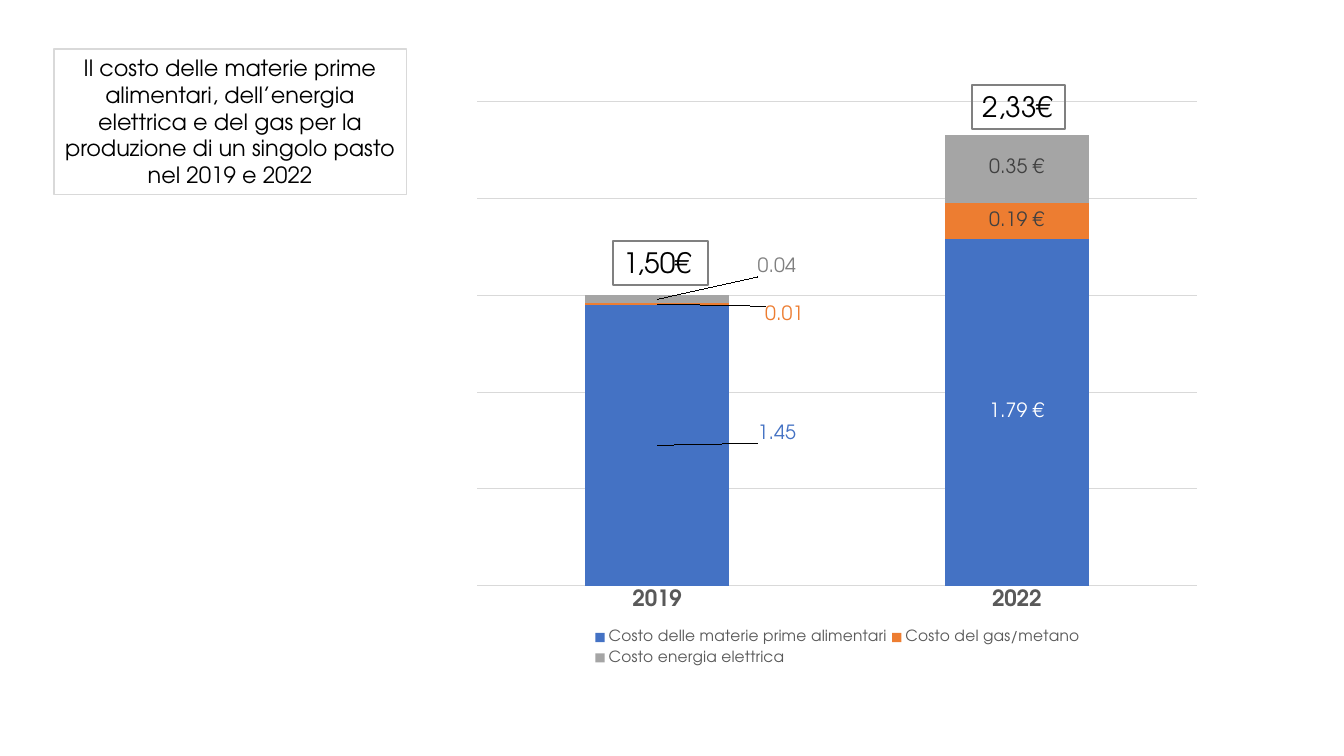
import lxml.etree
import pptx
import pptx.chart.data
import pptx.dml.color
import pptx.enum.chart
import pptx.enum.shapes
import pptx.enum.text
import pptx.oxml.ns
import pptx.util

EMU_PER_PX = 914400 / 100.8
FONT = "TeX Gyre Adventor"
COLORS = {
    "text": "000000",
    "axis": "595959",
    "grid": "D9D9D9",
    "frame": "808080",
    "dark": "404040",
    "white": "FFFFFF",
    "food": "4472C4",
    "gas": "ED7D31",
    "power": "A5A5A5",
}
YEARS = ["2019", "2022"]
# name, values, fill, label colour, 2019 label colour, 2019 label shift
COSTS = [
    ("Costo delle materie prime alimentari", (1.45, 1.79), "food", "white", "food", (0.16, -0.02)),
    ("Costo del gas/metano", (0.01, 0.19), "gas", "dark", "gas", (0.17, 0.02)),
    ("Costo energia elettrica", (0.04, 0.35), "power", "dark", "frame", (0.16, -0.055)),
]


def px(length):
    return pptx.util.Emu(round(length * EMU_PER_PX))


def color(name):
    return pptx.dml.color.RGBColor.from_string(COLORS[name])


def place(parent, index, **values):
    """Give a chart part a manual layout, as child number index."""
    tag = pptx.oxml.ns.qn
    for old in parent.findall(tag("c:layout")):
        parent.remove(old)
    layout = lxml.etree.Element(tag("c:layout"))
    manual = lxml.etree.SubElement(layout, tag("c:manualLayout"))
    for key, value in values.items():
        lxml.etree.SubElement(manual, tag("c:" + key)).set("val", str(value))
    parent.insert(index, layout)


class CostPage:
    def __init__(self, deck):
        self.page = deck.slides.add_slide(deck.slide_layouts[6])

    def style(self, font, size, name, bold=False):
        font.name = FONT
        font.size = pptx.util.Pt(size)
        font.bold = bold
        font.color.rgb = color(name)

    def line(self, line, name, width):
        line.color.rgb = color(name)
        line.width = pptx.util.Pt(width)

    def frame(self, bounds, text, size, border, width, align):
        box = self.page.shapes.add_shape(
            pptx.enum.shapes.MSO_SHAPE.RECTANGLE, *map(px, bounds))
        box.shadow.inherit = False
        box.fill.background()
        self.line(box.line, border, width)
        box.text_frame.word_wrap = True
        box.text_frame.vertical_anchor = pptx.enum.text.MSO_ANCHOR.TOP
        para = box.text_frame.paragraphs[0]
        para.text = text
        para.alignment = align
        self.style(para.font, size, "text")

    def cost_chart(self, bounds):
        data = pptx.chart.data.CategoryChartData(number_format='#,##0.00\\ "€"')
        data.categories = YEARS
        for name, values, *_ in COSTS:
            data.add_series(name, values)
        chart = self.page.shapes.add_chart(
            pptx.enum.chart.XL_CHART_TYPE.COLUMN_STACKED, *map(px, bounds), data).chart
        self.style(chart.font, 10, "text")
        chart.has_title = False

        plot = chart.plots[0]
        plot.gap_width, plot.overlap = 150, 100
        plot.vary_by_categories = False
        for series, cost in zip(plot.series, COSTS):
            self.series(series, *cost[1:])
        self.axes(chart)

        chart.has_legend = True
        chart.legend.position = pptx.enum.chart.XL_LEGEND_POSITION.BOTTOM
        chart.legend.include_in_layout = False
        self.style(chart.legend.font, 11, "axis")
        place(chart.legend._element, 1, xMode="edge", yMode="edge",
              x=0.17, y=0.92, w=0.66, h=0.08)
        area = chart._chartSpace.xpath(".//c:plotArea")[0]
        place(area, 0, layoutTarget="inner", xMode="edge", yMode="edge",
              x=0.019, y=0.019, w=0.96, h=0.834)

    def series(self, series, values, fill, label_color, first_color, shift):
        series.format.fill.solid()
        series.format.fill.fore_color.rgb = color(fill)
        labels = series.data_labels
        labels.show_value = True
        self.style(labels.font, 14, label_color)
        para = series.points[0].data_label.text_frame.paragraphs[0]
        span = para.add_run()
        span.text = f"{values[0]:.2f}"
        self.style(span.font, 14, first_color)
        label = series._element.xpath(".//c:dLbl")[0]
        place(label, 1, x=shift[0], y=shift[1])

    def axes(self, chart):
        years, euros = chart.category_axis, chart.value_axis
        years.major_tick_mark = pptx.enum.chart.XL_TICK_MARK.NONE
        self.style(years.tick_labels.font, 16, "axis", bold=True)
        self.line(years.format.line, "grid", 0.75)
        euros.minimum_scale, euros.maximum_scale, euros.major_unit = 0, 2.5, 0.5
        euros.has_major_gridlines = True
        self.line(euros.major_gridlines.format.line, "grid", 0.75)
        euros.visible = False


def main():
    deck = pptx.Presentation()
    deck.slide_width = pptx.util.Inches(13.33)
    deck.slide_height = pptx.util.Inches(7.5)
    page = CostPage(deck)
    align = pptx.enum.text.PP_ALIGN
    page.cost_chart((463, 91, 749, 580))
    page.frame((613, 241, 95, 44), "1,50€", 20, "frame", 1.5, align.LEFT)
    page.frame((972, 85, 93, 44), "2,33€", 20, "frame", 1.5, align.LEFT)
    page.frame((54, 49, 352, 146),
               "Il costo delle materie prime alimentari, dell’energia elettrica e del gas "
               "per la produzione di un singolo pasto nel 2019 e 2022",
               16, "grid", 0.75, align.CENTER)
    deck.save("out.pptx")


if __name__ == "__main__":
    main()
